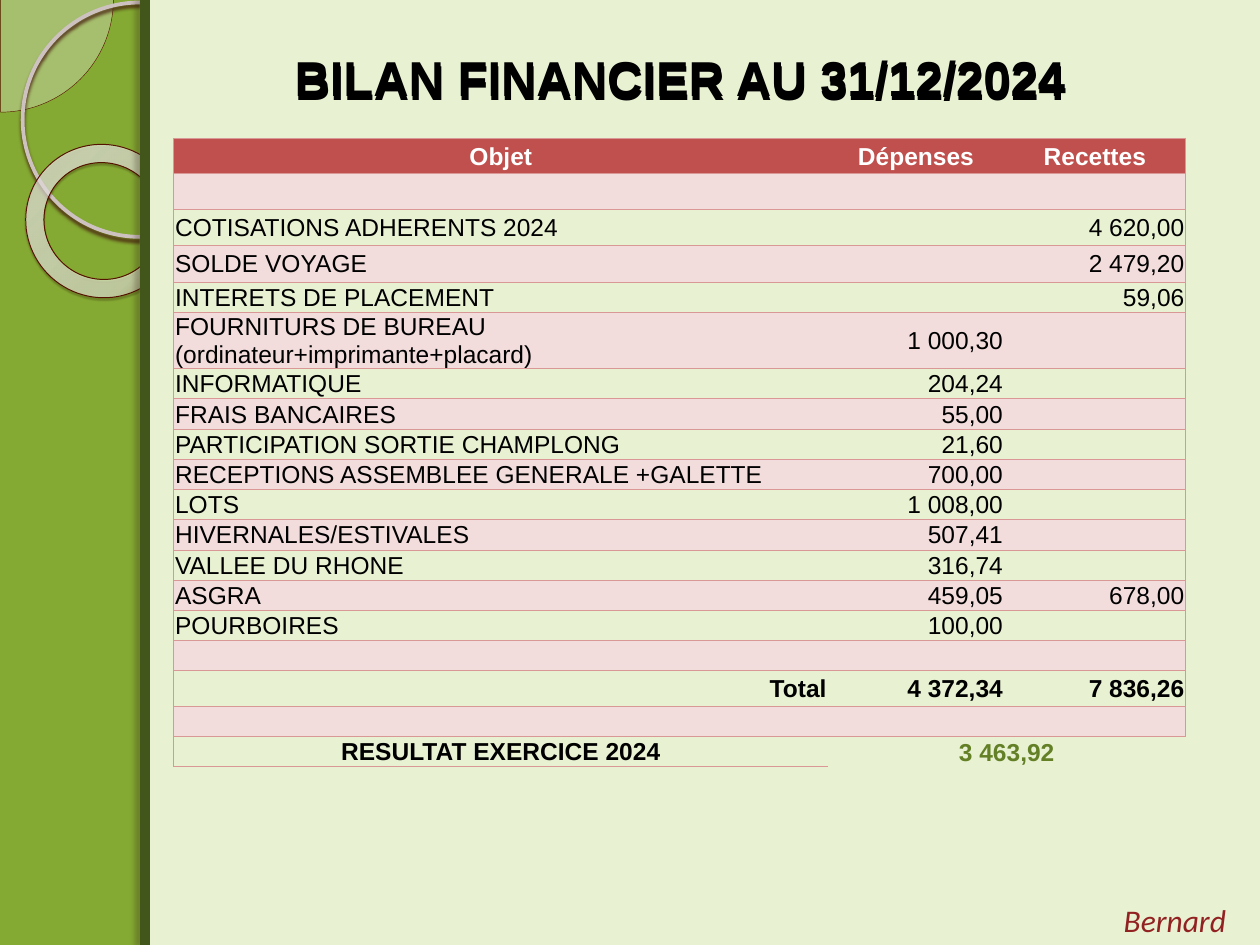
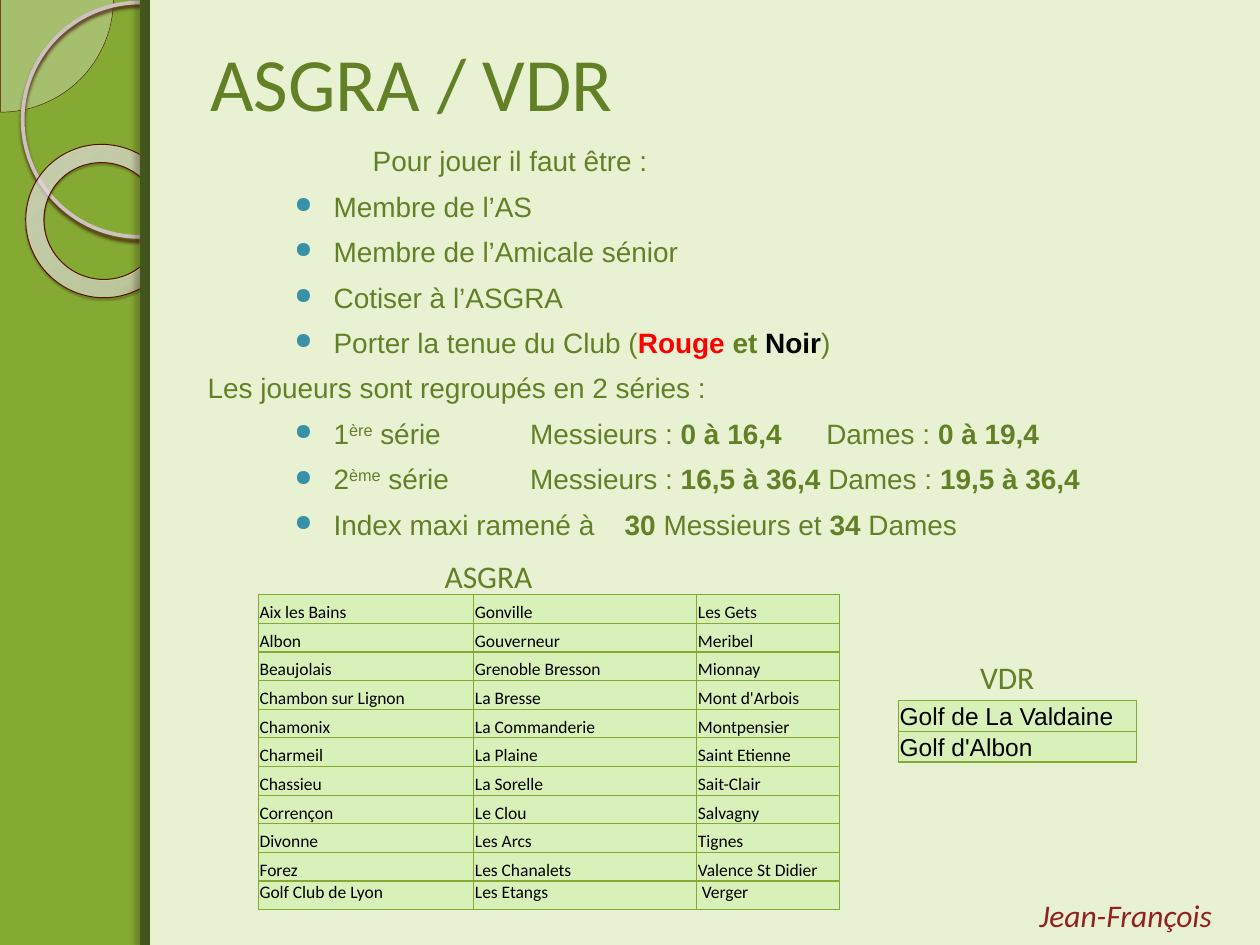
from typing import NamedTuple

from lxml import etree
from pptx import Presentation
from pptx.dml.color import RGBColor
from pptx.enum.shapes import MSO_SHAPE
from pptx.enum.text import MSO_ANCHOR, MSO_AUTO_SIZE, PP_ALIGN
from pptx.oxml.ns import qn
from pptx.util import Inches, Pt

LEFT, CENTER, RIGHT = PP_ALIGN.LEFT, PP_ALIGN.CENTER, PP_ALIGN.RIGHT
TOP, MIDDLE, BOTTOM = MSO_ANCHOR.TOP, MSO_ANCHOR.MIDDLE, MSO_ANCHOR.BOTTOM
NO_AUTOFIT = MSO_AUTO_SIZE.NONE
PIE, ELLIPSE, DONUT, RECTANGLE = MSO_SHAPE.PIE, MSO_SHAPE.OVAL, MSO_SHAPE.DONUT, MSO_SHAPE.RECTANGLE

# Colours
BLACK = RGBColor(0x00, 0x00, 0x00)
WHITE = RGBColor(0xFF, 0xFF, 0xFF)
RED = RGBColor(0xFF, 0x00, 0x00)
GREEN = RGBColor(0x84, 0xAA, 0x33)
DARK_GREEN = RGBColor(0x42, 0x55, 0x1A)
TEXT_GREEN = RGBColor(0x63, 0x80, 0x26)
PALE_GREEN = RGBColor(0xE8, 0xF2, 0xD3)
CELL_GREEN = RGBColor(0xD8, 0xF1, 0xB8)
PIE_FILL = RGBColor(0xEC, 0xEA, 0xE9)
PIE_LINE = RGBColor(0x59, 0x15, 0x02)
RING_LINE = RGBColor(0xCE, 0xC2, 0xC0)
DONUT_LINE = RGBColor(0x56, 0x12, 0x00)
HEADER_RED = RGBColor(0xC0, 0x50, 0x4D)
ROW_PINK = RGBColor(0xF2, 0xDD, 0xDC)
BORDER_PINK = RGBColor(0xD9, 0x97, 0x95)
BULLET_BLUE = RGBColor(0x38, 0x91, 0xA7)
PRESENTER_RED = RGBColor(0x92, 0x22, 0x22)

NO_TABLE_STYLE = "{2D5ABB26-0587-4C30-8999-92F81FD0307C}"


class Style(NamedTuple):
    size: float
    color: RGBColor = BLACK
    font: str = "Arial"
    bold: bool = False
    italic: bool = False


class Area(NamedTuple):
    left: float
    top: float
    width: float
    height: float

    def emu(self) -> list:
        return [Inches(value) for value in self]


class Shadow(NamedTuple):
    color: str
    opacity: int
    blur: float
    distance: float
    angle: int


class Decoration(NamedTuple):
    kind: int
    area: Area
    fill: RGBColor | None = None
    line: RGBColor | None = None
    line_width: float = 0
    shadow: Shadow | None = None
    adjustments: tuple = ()
    rotation: float = 0
    opacity: int = 100
    stops: tuple = ()


class Span(NamedTuple):
    text: str
    bold: bool = False
    color: RGBColor = TEXT_GREEN
    superscript: bool = False


class Line(NamedTuple):
    spans: tuple
    indent: float = 1.09
    bullet: bool = True
    tabs: tuple = ()


class Entry(NamedTuple):
    label: str = ""
    expense: str = ""
    income: str = ""
    height: float = 0.24
    aligns: tuple = (LEFT, RIGHT, RIGHT)
    style: Style = Style(14)


TITLE = Style(43, TEXT_GREEN, "Calibri")
BALANCE_TITLE = Style(28, bold=True)
BOLD_CELL = Style(14, bold=True)
PRESENTER = Style(18, PRESENTER_RED, "Calibri", italic=True)
CAPTION = Style(18, TEXT_GREEN, "Calibri")
BODY = Style(16, TEXT_GREEN)

# Background parts, from back to front
DECORATIONS = (
    Decoration(PIE, Area(-0.89, -0.9, 1.79, 1.79), PIE_FILL, PIE_LINE, 0.25,
               adjustments=(0, 54.02), opacity=33),
    Decoration(ELLIPSE, Area(0.18, 0.02, 1.86, 1.86), None, RING_LINE, 2.15,
               Shadow("44170B", 85, 2, 2, 90)),
    Decoration(DONUT, Area(0.2, 1.15, 1.23, 1.21), None, DONUT_LINE, 0.58,
               Shadow("260901", 35, 1, 1.2, 75), (0.12,), 38.6,
               stops=((0, "F4F2F2", 70), (70, "F9F8F8", 55), (100, "5E1400", 60))),
    Decoration(RECTANGLE, Area(1.11, 0, 8.89, 7.5), PALE_GREEN),
    Decoration(RECTANGLE, Area(1.11, 0, 0.08, 7.5), DARK_GREEN,
               shadow=Shadow("29130D", 25, 3, 3, 180)),
)

BALANCE_HEADING = "BILAN FINANCIER AU 31/12/2024"
LEDGER = (
    Entry(BALANCE_HEADING, height=0.49, aligns=(CENTER,) * 3, style=BALANCE_TITLE),
    Entry(height=0.25),
    Entry("Objet", "Dépenses", "Recettes", 0.28, (CENTER,) * 3, Style(14, WHITE, bold=True)),
    Entry(height=0.28),
    Entry("COTISATIONS ADHERENTS 2024", income="4 620,00", height=0.29),
    Entry("SOLDE VOYAGE", income="2 479,20", height=0.29),
    Entry("INTERETS DE PLACEMENT", income="59,06"),
    Entry("FOURNITURS DE BUREAU (ordinateur+imprimante+placard)", "1 000,30", height=0.44),
    Entry("INFORMATIQUE", "204,24"),
    Entry("FRAIS BANCAIRES", "55,00"),
    Entry("PARTICIPATION SORTIE CHAMPLONG", "21,60"),
    Entry("RECEPTIONS ASSEMBLEE GENERALE +GALETTE", "700,00"),
    Entry("LOTS", "1 008,00"),
    Entry("HIVERNALES/ESTIVALES", "507,41"),
    Entry("VALLEE DU RHONE", "316,74"),
    Entry("ASGRA", "459,05", "678,00"),
    Entry("POURBOIRES", "100,00"),
    Entry(),
    Entry("Total", "4 372,34", "7 836,26", 0.28, (RIGHT,) * 3, BOLD_CELL),
    Entry(),
    Entry("RESULTAT EXERCICE 2024", "3 463,92", aligns=(CENTER,) * 3, style=BOLD_CELL),
)
HEADER_ROW = 2
RESULT_ROW = len(LEDGER) - 1

RULES = (
    Line((Span("Pour jouer il faut être :"),), 1.4, False),
    Line((Span("Membre de l’AS"),)),
    Line((Span("Membre de l’Amicale sénior"),)),
    Line((Span("Cotiser à l’ASGRA"),)),
    Line((Span("Porter la tenue du Club ("), Span("Rouge", True, RED), Span(" et ", True),
          Span("Noir", True, BLACK), Span(")"))),
    Line((Span("Les joueurs sont regroupés en 2 séries :"),), 0.09, False),
    Line((Span("1"), Span("ère", superscript=True), Span(" série\tMessieurs : "),
          Span("0 à 16,4\t", True), Span("Dames : "), Span("0 à 19,4", True)), tabs=(2.65, 5)),
    Line((Span("2"), Span("ème", superscript=True), Span(" série\tMessieurs : "),
          Span("16,5 à 36,4 ", True), Span("Dames : "), Span("19,5 à 36,4", True)), tabs=(2.65, 5)),
    Line((Span("Index maxi ramené à\t"), Span("30 ", True), Span("Messieurs et "),
          Span("34", True), Span(" Dames")), tabs=(3.4,)),
)

ASGRA_CLUBS = (
    ("Aix les Bains", "Gonville", "Les Gets"),
    ("Albon", "Gouverneur", "Meribel"),
    ("Beaujolais", "Grenoble Bresson", "Mionnay"),
    ("Chambon sur Lignon", "La Bresse", "Mont d'Arbois"),
    ("Chamonix", "La Commanderie", "Montpensier"),
    ("Charmeil", "La Plaine", "Saint Etienne"),
    ("Chassieu", "La Sorelle", "Sait-Clair"),
    ("Corrençon", "Le Clou", "Salvagny"),
    ("Divonne", "Les Arcs", "Tignes"),
    ("Forez", "Les Chanalets", "Valence St Didier"),
    ("Golf Club de Lyon", "Les Etangs", " Verger"),
)
VDR_CLUBS = (("Golf de La Valdaine",), ("Golf d'Albon",))


def add_element(parent, tag: str, **attributes):
    return etree.SubElement(parent, qn(tag), {key: str(value) for key, value in attributes.items()})


def add_color(parent, color, opacity: int = 100) -> None:
    element = add_element(parent, "a:srgbClr", val=color)
    if opacity < 100:
        add_element(element, "a:alpha", val=opacity * 1000)


def add_run(para, text: str, style: Style):
    run = para.add_run()
    run.text = text
    font = run.font
    font.name, font.size, font.color.rgb = style.font, Pt(style.size), style.color
    font.bold, font.italic = style.bold, style.italic
    return run


def add_text(slide, area: Area, text: str, style: Style) -> None:
    frame = slide.shapes.add_textbox(*area.emu()).text_frame
    frame.word_wrap = True
    add_run(frame.paragraphs[0], text, style)


def set_title(slide, area: Area, text: str, style: Style, align=LEFT) -> None:
    title = slide.shapes.title
    title.left, title.top, title.width, title.height = area.emu()
    frame = title.text_frame
    frame.auto_size, frame.vertical_anchor = NO_AUTOFIT, MIDDLE
    frame.paragraphs[0].alignment = align
    add_run(frame.paragraphs[0], text, style)


# Shared background, moved to the slide master
def add_decoration(slide, part: Decoration):
    shape = slide.shapes.add_shape(part.kind, *part.area.emu())
    shape.rotation = part.rotation
    for index, value in enumerate(part.adjustments):
        shape.adjustments[index] = value
    properties = shape.element.spPr
    if part.fill is None:
        shape.fill.background()
    else:
        shape.fill.solid()
        shape.fill.fore_color.rgb = part.fill
        color = properties.find(qn("a:solidFill"))[0]
        add_element(color, "a:alpha", val=part.opacity * 1000)
    if part.stops:
        gradient = etree.Element(qn("a:gradFill"))
        stop_list = add_element(gradient, "a:gsLst")
        for position, color, opacity in part.stops:
            add_color(add_element(stop_list, "a:gs", pos=position * 1000), color, opacity)
        circle = add_element(gradient, "a:path", path="circle")
        add_element(circle, "a:fillToRect", l=-408000, t=-50000, r=508000, b=150000)
        properties.replace(properties.find(qn("a:noFill")), gradient)
    if part.line is None:
        shape.line.fill.background()
    else:
        shape.line.color.rgb, shape.line.width = part.line, Pt(part.line_width)
    shape.shadow.inherit = False
    if part.shadow:
        shadow = part.shadow
        outer = add_element(properties.find(qn("a:effectLst")), "a:outerShdw",
                            blurRad=Pt(shadow.blur), dist=Pt(shadow.distance),
                            dir=shadow.angle * 60000, algn="tl", rotWithShape=0)
        add_color(outer, shadow.color, shadow.opacity)
    return shape


def decorate_master(deck, slide) -> None:
    fill = deck.slide_master.background.fill
    fill.solid()
    fill.fore_color.rgb = GREEN
    for index, part in enumerate(DECORATIONS):
        element = add_decoration(slide, part).element
        element.nvSpPr.cNvPr.set("id", str(100 + index))
        deck.slide_master.shapes.element.insert(2 + index, element)


# Tables
def add_plain_table(slide, area: Area, widths: tuple, row_count: int):
    frame = slide.shapes.add_table(row_count, len(widths), *area.emu())
    table = frame.table
    table.first_row = table.horz_banding = False
    frame.element.find(".//" + qn("a:tableStyleId")).text = NO_TABLE_STYLE
    for column, width in zip(table.columns, widths):
        column.width = Inches(width)
    return table


def fill_cell(cell, text: str, style: Style, align, anchor, fill: RGBColor | None,
              sides: str, border: RGBColor, border_width: float) -> None:
    cell.margin_left = cell.margin_top = cell.margin_right = Inches(0.01)
    cell.margin_bottom = 0
    cell.vertical_anchor = anchor
    properties = cell._tc.get_or_add_tcPr()
    for side in "LRTB":
        if side in sides:
            line = add_element(properties, f"a:ln{side}", w=Pt(border_width))
            add_color(add_element(line, "a:solidFill"), border)
    if fill is None:
        cell.fill.background()
    else:
        cell.fill.solid()
        cell.fill.fore_color.rgb = fill
    para = cell.text_frame.paragraphs[0]
    para.alignment = align
    if text:
        add_run(para, text, style)
    else:
        add_element(para._p, "a:endParaRPr", sz=1000)


def ledger_sides(row: int, column: int) -> str:
    if row < HEADER_ROW:
        return "B" if row else ""
    if row == RESULT_ROW and column:
        return "T"
    return "TB" + ("L", "", "R")[column]


def add_ledger(slide) -> None:
    table = add_plain_table(slide, Area(1.38, 0.36, 8.03, 5.82), (5.19, 1.4, 1.44), len(LEDGER))
    table.cell(0, 0).merge(table.cell(0, 2))
    table.cell(RESULT_ROW, 1).merge(table.cell(RESULT_ROW, 2))
    for row, entry in enumerate(LEDGER):
        table.rows[row].height = Inches(entry.height)
        fill = HEADER_RED if row == HEADER_ROW else ROW_PINK if row > HEADER_ROW and row % 2 else None
        for column, text in enumerate((entry.label, entry.expense, entry.income)):
            is_result = row == RESULT_ROW and column == 1
            style = entry.style._replace(color=TEXT_GREEN) if is_result else entry.style
            anchor = BOTTOM if row == 0 or is_result else MIDDLE
            fill_cell(table.cell(row, column), text, style, entry.aligns[column], anchor,
                      fill, ledger_sides(row, column), BORDER_PINK, 0.5)


def add_clubs(slide, area: Area, widths: tuple, clubs: tuple, style: Style, last_anchor) -> None:
    table = add_plain_table(slide, area, widths, len(clubs))
    for row, names in enumerate(clubs):
        table.rows[row].height = Inches(area.height / len(clubs))
        anchor = last_anchor if row == len(clubs) - 1 else BOTTOM
        for column, name in enumerate(names):
            fill_cell(table.cell(row, column), name, style, LEFT, anchor, CELL_GREEN, "LRTB", GREEN, 0.75)


def add_rules(slide) -> None:
    frame = slide.shapes.add_textbox(*Area(1.46, 1.09, 8.2, 3.15).emu()).text_frame
    frame.word_wrap = True
    for index, line in enumerate(RULES):
        para = frame.add_paragraph() if index else frame.paragraphs[0]
        properties = para._p.get_or_add_pPr()
        properties.set("marL", str(Inches(line.indent)))
        properties.set("indent", str(Inches(-0.31 if line.bullet else 0)))
        if line.bullet:
            add_color(add_element(properties, "a:buClr"), BULLET_BLUE)
            add_element(properties, "a:buSzPct", val=80000)
            add_element(properties, "a:buChar", char="●")
        if line.tabs:
            tab_list = add_element(properties, "a:tabLst")
            for position in line.tabs:
                add_element(tab_list, "a:tab", pos=Inches(position), algn="l")
        if index:
            para.space_before = Pt(6.8)
        for span in line.spans:
            run = add_run(para, span.text, BODY._replace(bold=span.bold, color=span.color))
            if span.superscript:
                run.font._element.set("baseline", "30000")


def main() -> None:
    deck = Presentation()
    deck.slide_width, deck.slide_height = Inches(10), Inches(7.5)
    title_only = deck.slide_layouts[5]

    # Financial balance
    balance = deck.slides.add_slide(title_only)
    decorate_master(deck, balance)
    add_ledger(balance)
    add_text(balance, Area(8.82, 7.1, 1.18, 0.4), "Bernard", PRESENTER)
    set_title(balance, Area(2.23, 0.36, 6.34, 0.57), BALANCE_HEADING, BALANCE_TITLE, CENTER)

    # Competition rules and clubs
    rules = deck.slides.add_slide(title_only)
    set_title(rules, Area(1.57, 0.02, 8.2, 1.25), "ASGRA / VDR", TITLE)
    add_text(rules, Area(8.15, 7.06, 1.85, 0.4), "Jean-François", PRESENTER)
    add_rules(rules)
    add_clubs(rules, Area(2.05, 4.72, 4.61, 2.5), (1.71, 1.77, 1.13), ASGRA_CLUBS,
              Style(10, font="Calibri"), TOP)
    add_clubs(rules, Area(7.13, 5.56, 1.89, 0.48), (1.89,), VDR_CLUBS, Style(14), BOTTOM)
    add_text(rules, Area(7.68, 5.17, 0.73, 0.4), "VDR", CAPTION)
    add_text(rules, Area(3.43, 4.37, 1.09, 0.4), "ASGRA", CAPTION)

    deck.save("out.pptx")


if __name__ == "__main__":
    main()
